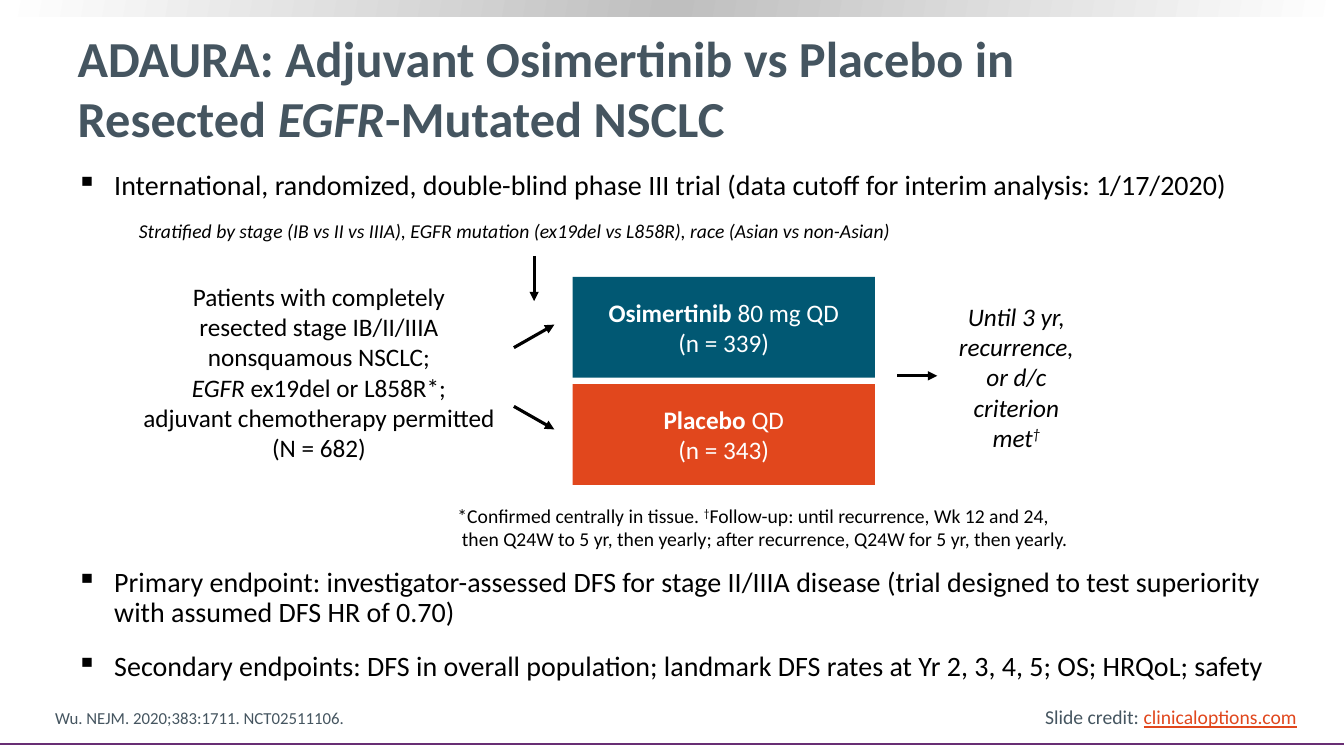
"""Build the ADAURA trial design slide."""
from copy import deepcopy
from dataclasses import dataclass

from pptx import Presentation
from pptx.dml.color import RGBColor
from pptx.enum.shapes import MSO_CONNECTOR, MSO_SHAPE
from pptx.enum.text import MSO_ANCHOR, MSO_AUTO_SIZE, PP_ALIGN
from pptx.oxml.ns import qn
from pptx.util import Cm, Pt
from lxml.etree import SubElement


@dataclass(frozen=True)
class Theme:
    font: str = "Calibri"
    slate: str = "455560"
    black: str = "000000"
    white: str = "FFFFFF"
    silver: str = "BFBFBF"
    teal: str = "015873"
    orange: str = "E1471D"
    purple: str = "682E74"
    title: int = 36
    bullet: int = 20
    body: int = 18
    note: int = 14
    cite: int = 12


T = Theme()
SLIDE_W, SLIDE_H = 33.87, 19.05

TITLE = [[("ADAURA: Adjuvant Osimertinib vs Placebo in\nResected ", "b"),
          ("EGFR", "bi"), ("-Mutated NSCLC", "b")]]
DESIGN = [[("International, randomized, double-blind phase III trial "
            "(data cutoff for interim analysis: 1/17/2020)", "")]]
ENDPOINTS = [
    [("Primary endpoint: investigator-assessed DFS for stage II/IIIA disease "
      "(trial designed to test superiority with assumed DFS HR of 0.70)", "")],
    [("Secondary endpoints: DFS in overall population; landmark DFS rates "
      "at Yr 2, 3, 4, 5; OS; HRQoL; safety", "")],
]
STRATA = [[("Stratified by stage (IB vs II vs IIIA), EGFR mutation "
            "(ex19del vs L858R), race (Asian vs non-Asian)", "i")]]
PATIENTS = [
    [("Patients with completely\nresected stage IB/II/IIIA", "")],
    [("nonsquamous NSCLC;", "")],
    [("EGFR", "i"), (" ex19del or L858R*;", "")],
    [("adjuvant chemotherapy permitted", "")],
    [("(N = 682)", "")],
]
DURATION = [[("Until 3 yr, recurrence, or d/c criterion met", "i"), ("†", "i^")]]
FOOTNOTE = [[("*Confirmed centrally in tissue. ", ""), ("†", "^"),
             ("Follow-up: until recurrence, Wk 12 and 24,\n then Q24W to 5 yr, "
              "then yearly; after recurrence, Q24W for 5 yr, then yearly.", "")]]
CITATION = [[("Wu. NEJM. 2020;383:1711. NCT02511106.", "")]]
CREDIT = [[("Slide credit: ", ""), ("clinicaloptions.com", "u")]]
ARMS = [("Osimertinib", " 80 mg QD", "(n = 339)", T.teal),
        ("Placebo", " QD", "(n = 343)", T.orange)]

ARM_X, ARM_Y, ARM_W, ARM_H, ARM_STEP = 14.43, 6.98, 7.62, 2.54, 2.7
ARROWS = [(22.61, 9.47, 23.62, 9.47), (12.95, 10.24, 13.97, 10.82),
          (12.95, 8.76, 13.97, 8.18), (13.46, 6.45, 13.46, 7.59)]


def write(tf, text, size, color=T.black, align=PP_ALIGN.LEFT,
          anchor=MSO_ANCHOR.TOP, wrap=True, bullet=False):
    """Fill a text frame with paragraphs of (text, flags) runs."""
    tf.word_wrap, tf.auto_size, tf.vertical_anchor = wrap, MSO_AUTO_SIZE.NONE, anchor
    for i, runs in enumerate(text):
        p = tf.add_paragraph() if i else tf.paragraphs[0]
        p.alignment = align
        if bullet:
            p.line_spacing, p.space_after = 0.9, Pt(7)
            p.space_before = Pt(10 if i else 0)
            pPr = p._p.get_or_add_pPr()
            pPr.set("marL", str(Cm(0.95)))
            pPr.set("indent", str(Cm(-0.95)))
            SubElement(pPr, qn("a:buChar")).set("char", "▪")
        for words, flags in runs:
            for n, line in enumerate(words.split("\n")):
                if n:
                    p.add_line_break()
                r = p.add_run()
                r.text = line
                f = r.font
                f.name, f.size = T.font, Pt(size)
                f.bold, f.italic, f.underline = (k in flags for k in "biu")
                f.color.rgb = RGBColor.from_string(T.orange if "u" in flags else color)
                if "^" in flags:
                    f._element.set("baseline", "30000")


def add_text(s, box, text, size, **fmt):
    """Add a text box at a (left, top, width, height) place."""
    write(s.shapes.add_textbox(*map(Cm, box)).text_frame, text, size, **fmt)


def add_rect(s, x, y, w, h):
    """Add a rectangle without line or shadow."""
    sp = s.shapes.add_shape(MSO_SHAPE.RECTANGLE, Cm(x), Cm(y), Cm(w), Cm(h))
    sp.shadow.inherit = False
    sp.line.fill.background()
    return sp


def add_line(s, ends, color, width, arrow=False):
    """Add a straight line, with an arrowhead at its end if asked."""
    c = s.shapes.add_connector(MSO_CONNECTOR.STRAIGHT, *map(Cm, ends))
    c.line.color.rgb, c.line.width = RGBColor.from_string(color), Pt(width)
    if arrow:
        SubElement(c.line._get_or_add_ln(), qn("a:tailEnd")).set("type", "triangle")
    SubElement(c._element.spPr, qn("a:effectLst"))


def add_band(s):
    """Add the white-silver-white band along the top edge."""
    fill = add_rect(s, 0, 0, SLIDE_W, 0.41).fill
    fill.gradient()
    fill.gradient_angle = 170
    first = fill.gradient_stops[0]._gs
    first.addnext(deepcopy(first))
    for stop, pos, color in zip(fill.gradient_stops, (0, 0.5, 1),
                                (T.white, T.silver, T.white)):
        stop.position, stop.color.rgb = pos, RGBColor.from_string(color)


def main():
    """Lay out the slide and save it."""
    prs = Presentation()
    prs.slide_width, prs.slide_height = Cm(SLIDE_W), Cm(SLIDE_H)
    s = prs.slides.add_slide(prs.slide_layouts[5])
    middle, center = MSO_ANCHOR.MIDDLE, PP_ALIGN.CENTER

    add_band(s)
    add_line(s, (0, 18.75, SLIDE_W, 18.75), T.purple, 1.5)
    title = s.shapes.title
    title.left, title.top, title.width, title.height = map(Cm, (1.7, 0.66, 30.2, 3.07))
    write(title.text_frame, TITLE, T.title, color=T.slate, anchor=middle)

    add_text(s, (1.68, 4.19, 30.23, 0.99), DESIGN, T.bullet, bullet=True)
    add_text(s, (26.09, 17.65, 6.91, 0.86), CREDIT, T.note, color=T.slate, wrap=False)
    add_text(s, (1.14, 17.7, 21.82, 0.76), CITATION, T.cite, color=T.slate,
             anchor=MSO_ANCHOR.BOTTOM)
    add_text(s, (3.25, 6.96, 9.58, 4.88), PATIENTS, T.body, align=center)
    add_text(s, (23.75, 7.44, 3.73, 4.11), DURATION, T.body, align=center, anchor=middle)
    add_text(s, (3.25, 5.38, 20.4, 0.86), STRATA, T.note, anchor=middle)
    add_text(s, (11.28, 12.57, 17.12, 1.45), FOOTNOTE, T.note)
    add_text(s, (1.68, 14.2, 30.94, 4.39), ENDPOINTS, T.bullet, bullet=True)

    for i, (drug, dose, count, color) in enumerate(ARMS):
        sp = add_rect(s, ARM_X, ARM_Y + i * ARM_STEP, ARM_W, ARM_H)
        sp.fill.solid()
        sp.fill.fore_color.rgb = RGBColor.from_string(color)
        write(sp.text_frame, [[(drug, "b"), (dose, "")], [(count, "")]], T.body,
              color=T.white, align=center, anchor=middle, wrap=False)
    for ends in ARROWS:
        add_line(s, ends, T.black, 2.25, arrow=True)
    prs.save("out.pptx")


if __name__ == "__main__":
    main()
